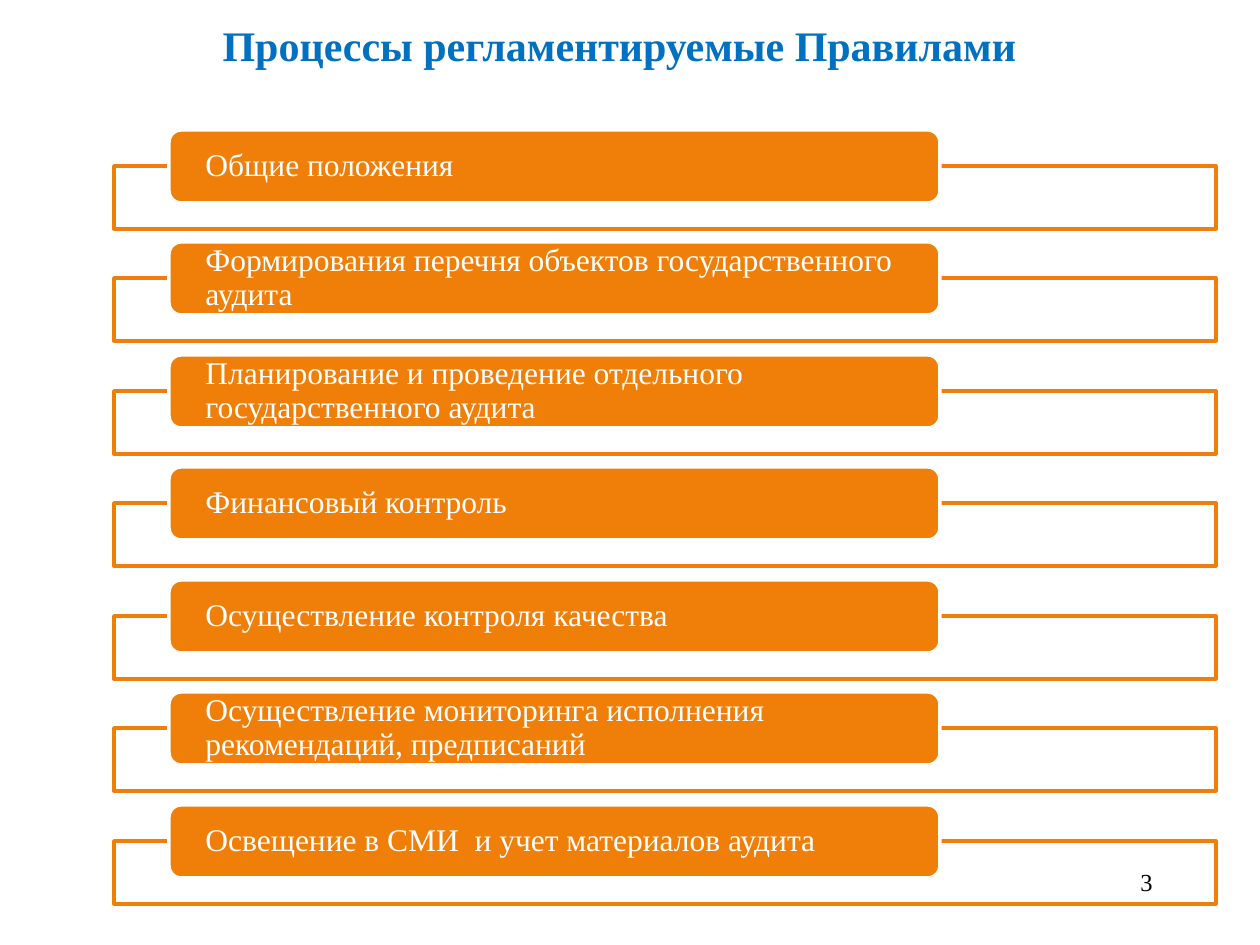
from lxml import etree
from pptx import Presentation
from pptx import util as u
from pptx.dml.color import RGBColor
from pptx.enum import shapes, text
from pptx.oxml.ns import qn

PX = 914400 // 126
ORANGE, WHITE, BLUE, BLACK = "F07F09", "FFFFFF", "0070C0", "000000"
PROCESSES = [
    "Общие положения",
    "Формирования перечня объектов государственного аудита",
    "Планирование и проведение отдельного государственного аудита",
    "Финансовый контроль",
    "Осуществление контроля качества",
    "Осуществление мониторинга исполнения рекомендаций, предписаний",
    "Освещение в СМИ  и учет материалов аудита",
]


def px(*lengths):
    return [u.Emu(length * PX) for length in lengths]


def colour(hex_value):
    return RGBColor.from_string(hex_value)


def write(holder, words, size, hex_value, align, anchor, bold=False):
    frame = holder.text_frame
    frame.word_wrap = True
    frame.vertical_anchor = anchor
    frame.text = words
    paragraph = frame.paragraphs[0]
    paragraph.alignment = align
    font = paragraph.runs[0].font
    font.name, font.size, font.bold = "Times New Roman", u.Pt(size), bold
    font.color.rgb = colour(hex_value)
    return frame


def add_box(slide, preset, box, fill, line):
    shape = slide.shapes.add_shape(preset, *px(*box))
    shape.shadow.inherit = False
    shape.fill.solid()
    shape.fill.fore_color.rgb = colour(fill)
    shape.line.color.rgb = colour(line)
    shape.line.width = u.Pt(2)
    return shape


def add_title(slide, box):
    title = slide.shapes.add_textbox(*px(*box))
    write(title, "Процессы регламентируемые Правилами", 24, BLUE,
          text.PP_ALIGN.CENTER, text.MSO_ANCHOR.MIDDLE, bold=True)


def add_process(slide, name, left, top, width):
    frame = add_box(slide, shapes.MSO_SHAPE.RECTANGLE,
                    (left, top + 36, width, 63), WHITE, ORANGE)
    frame_colour = frame.fill._xPr.find(qn("a:solidFill"))[0]
    etree.SubElement(frame_colour, qn("a:alpha")).set("val", "90000")

    label = add_box(slide, shapes.MSO_SHAPE.ROUNDED_RECTANGLE,
                    (left + 55, top, width * 7 // 10, 73), ORANGE, WHITE)
    label_text = write(label, name, 18, WHITE,
                       text.PP_ALIGN.LEFT, text.MSO_ANCHOR.MIDDLE)
    label_text.margin_left, label_text.margin_right = px(33, 33)
    label_text.margin_top = label_text.margin_bottom = 0
    label_text.paragraphs[0].line_spacing = 0.9


def add_process_list(slide, box):
    left, top, width, height = box
    for index, name in enumerate(PROCESSES):
        offset = index * height // len(PROCESSES)
        add_process(slide, name, left, top + offset, width)


def add_page_number(slide, box):
    number = slide.shapes.add_textbox(*px(*box))
    write(number, "3", 14, BLACK, text.PP_ALIGN.RIGHT, text.MSO_ANCHOR.TOP)


def main():
    deck = Presentation()
    deck.slide_width, deck.slide_height = u.Inches(10), u.Inches(7.5)
    slide = deck.slides.add_slide(deck.slide_layouts[6])
    add_title(slide, (84, 0, 1071, 89))
    add_process_list(slide, (114, 130, 1102, 788))
    add_page_number(slide, (903, 861, 262, 63))
    deck.save("out.pptx")


if __name__ == "__main__":
    main()
